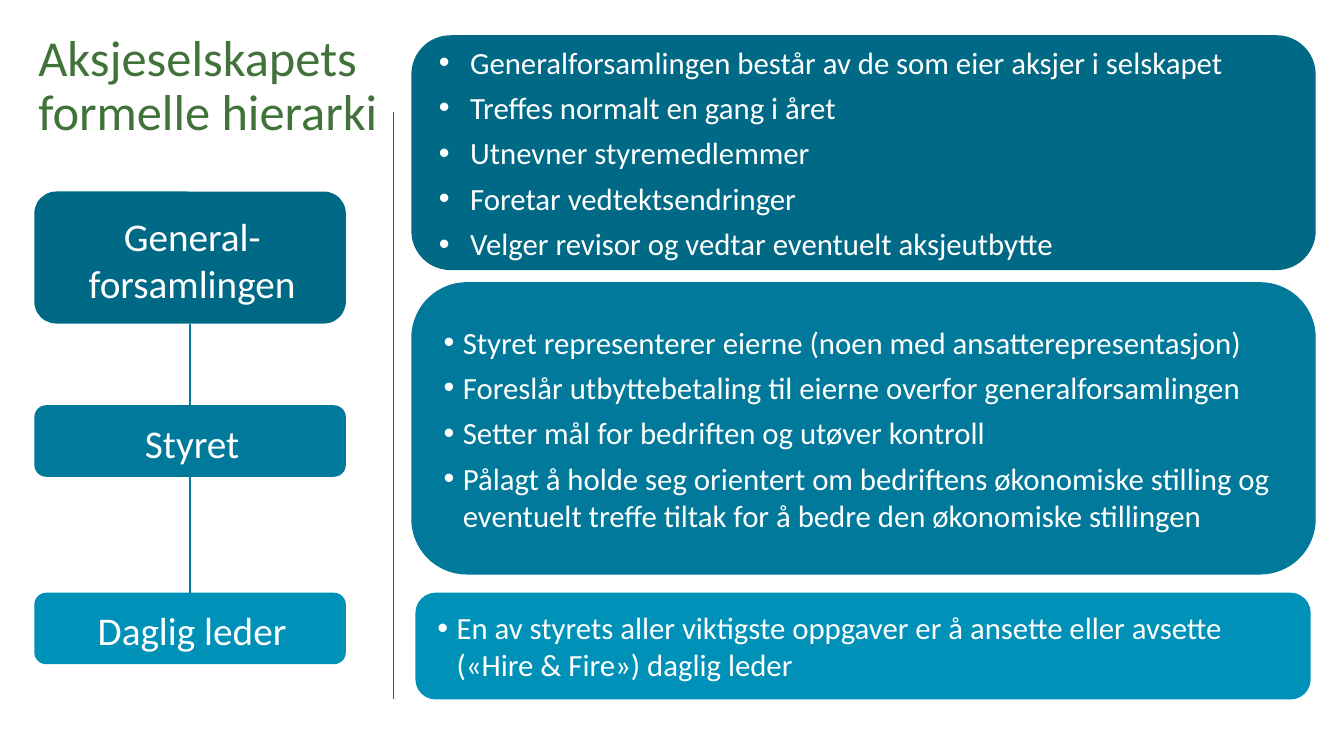
from dataclasses import dataclass

from lxml.etree import SubElement
from pptx import Presentation
from pptx.dml.color import RGBColor
from pptx.enum.shapes import MSO_CONNECTOR, MSO_SHAPE
from pptx.enum.text import MSO_ANCHOR, MSO_AUTO_SIZE, PP_ALIGN
from pptx.oxml.ns import qn
from pptx.util import Pt

EMU_PER_PX = 9144  # 100 px to the inch


@dataclass(frozen=True)
class Theme:
    font: str = "Calibri"
    title: str = "41723A"
    text: str = "FFFFFF"
    divider: str = "44546A"
    assembly: str = "006986"
    board: str = "00799A"
    manager: str = "0091B8"
    title_size: int = 36
    role_size: int = 28
    duty_size: int = 22


def px(length):
    return length * EMU_PER_PX


class HierarchySlide:
    def __init__(self, deck, theme):
        self.theme = theme
        self.slide = deck.slides.add_slide(deck.slide_layouts[5])

    def style(self, paragraph, size, color):
        paragraph.font.name = self.theme.font
        paragraph.font.size = Pt(size)
        paragraph.font.color.rgb = RGBColor.from_string(color)

    def title(self, text, left, top, width, height):
        heading = self.slide.shapes.title
        heading.left, heading.top = px(left), px(top)
        heading.width, heading.height = px(width), px(height)
        frame = heading.text_frame
        frame.text = text
        frame.word_wrap = True
        frame.auto_size = MSO_AUTO_SIZE.SHAPE_TO_FIT_TEXT
        frame.vertical_anchor = MSO_ANCHOR.MIDDLE
        paragraph = frame.paragraphs[0]
        paragraph.alignment = PP_ALIGN.LEFT
        paragraph.line_spacing = 0.9
        self.style(paragraph, self.theme.title_size, self.theme.title)

    def panel(self, box, color, insets, rounding=None):
        panel = self.slide.shapes.add_shape(
            MSO_SHAPE.ROUNDED_RECTANGLE, *map(px, box))
        panel.shadow.inherit = False
        panel.fill.solid()
        panel.fill.fore_color.rgb = RGBColor.from_string(color)
        panel.line.fill.background()
        if rounding is not None:
            panel.adjustments[0] = rounding
        frame = panel.text_frame
        frame.word_wrap = True
        frame.vertical_anchor = MSO_ANCHOR.MIDDLE
        (frame.margin_left, frame.margin_top,
         frame.margin_right, frame.margin_bottom) = map(px, insets)
        return panel

    def role(self, text, box, color):
        role = self.panel(box, color, (12, 8, 12, 5))
        paragraph = role.text_frame.paragraphs[0]
        paragraph.text = text
        paragraph.alignment = PP_ALIGN.CENTER
        paragraph._p.get_or_add_pPr().set("marL", str(px(4)))
        self.style(paragraph, self.theme.role_size, self.theme.text)
        return role

    def duties(self, items, box, color, margin, hanging, rounding):
        frame = self.panel(box, color, (12, 12, 12, 12), rounding).text_frame
        for index, item in enumerate(items):
            paragraph = frame.add_paragraph() if index else frame.paragraphs[0]
            paragraph.text = item
            paragraph.alignment = PP_ALIGN.LEFT
            if index:
                paragraph.space_before = Pt(6)
            properties = paragraph._p.get_or_add_pPr()
            properties.set("marL", str(px(margin)))
            properties.set("indent", str(px(-hanging)))
            SubElement(properties, qn("a:buFont"), typeface="Arial")
            SubElement(properties, qn("a:buChar"), char="•")
            self.style(paragraph, self.theme.duty_size, self.theme.text)

    def line(self, start, end, color, weight):
        line = self.slide.shapes.add_connector(
            MSO_CONNECTOR.STRAIGHT, *map(px, start + end))
        line.line.color.rgb = RGBColor.from_string(color)
        line.line.width = Pt(weight)
        SubElement(line._element.spPr, qn("a:effectLst"))
        return line

    def link(self, upper, lower):
        link = self.line((0, 0), (0, 0), self.theme.board, 1)
        link.begin_connect(upper, 2)
        link.end_connect(lower, 0)


def main():
    deck = Presentation()
    deck.slide_width, deck.slide_height = px(1333), px(750)
    theme = Theme()
    page = HierarchySlide(deck, theme)

    # Title and divider
    page.title("Aksjeselskapets formelle hierarki", 28, 27, 361, 119)
    page.line((390, 111), (390, 693), theme.divider, 0.5)

    # Levels of the company, from the top down
    levels = [
        ("General-forsamlingen", 190, 131, theme.assembly),
        ("Styret", 402, 71, theme.board),
        ("Daglig leder", 588, 71, theme.manager),
    ]
    roles = [page.role(name, (34, top, 309, height), color)
             for name, top, height, color in levels]
    for upper, lower in zip(roles, roles[1:]):
        page.link(upper, lower)

    # Duties of each level
    page.duties([
        "Generalforsamlingen består av de som eier aksjer i selskapet",
        "Treffes normalt en gang i året",
        "Utnevner styremedlemmer",
        "Foretar vedtektsendringer",
        "Velger revisor og vedtar eventuelt aksjeutbytte",
    ], (408, 35, 897, 233), theme.assembly, 35, 31, None)
    page.duties([
        "Styret representerer eierne (noen med ansatterepresentasjon)",
        "Foreslår utbyttebetaling til eierne overfor generalforsamlingen",
        "Setter mål for bedriften og utøver kontroll",
        "Pålagt å holde seg orientert om bedriftens økonomiske stilling og "
        "eventuelt treffe tiltak for å bedre den økonomiske stillingen",
    ], (408, 280, 897, 290), theme.board, 23, 19, 0.19)
    page.duties([
        "En av styrets aller viktigste oppgaver er å ansette eller avsette "
        "(«Hire & Fire») daglig leder",
    ], (412, 588, 888, 106), theme.manager, 23, 19, 0.19)

    deck.save("out.pptx")


if __name__ == "__main__":
    main()
